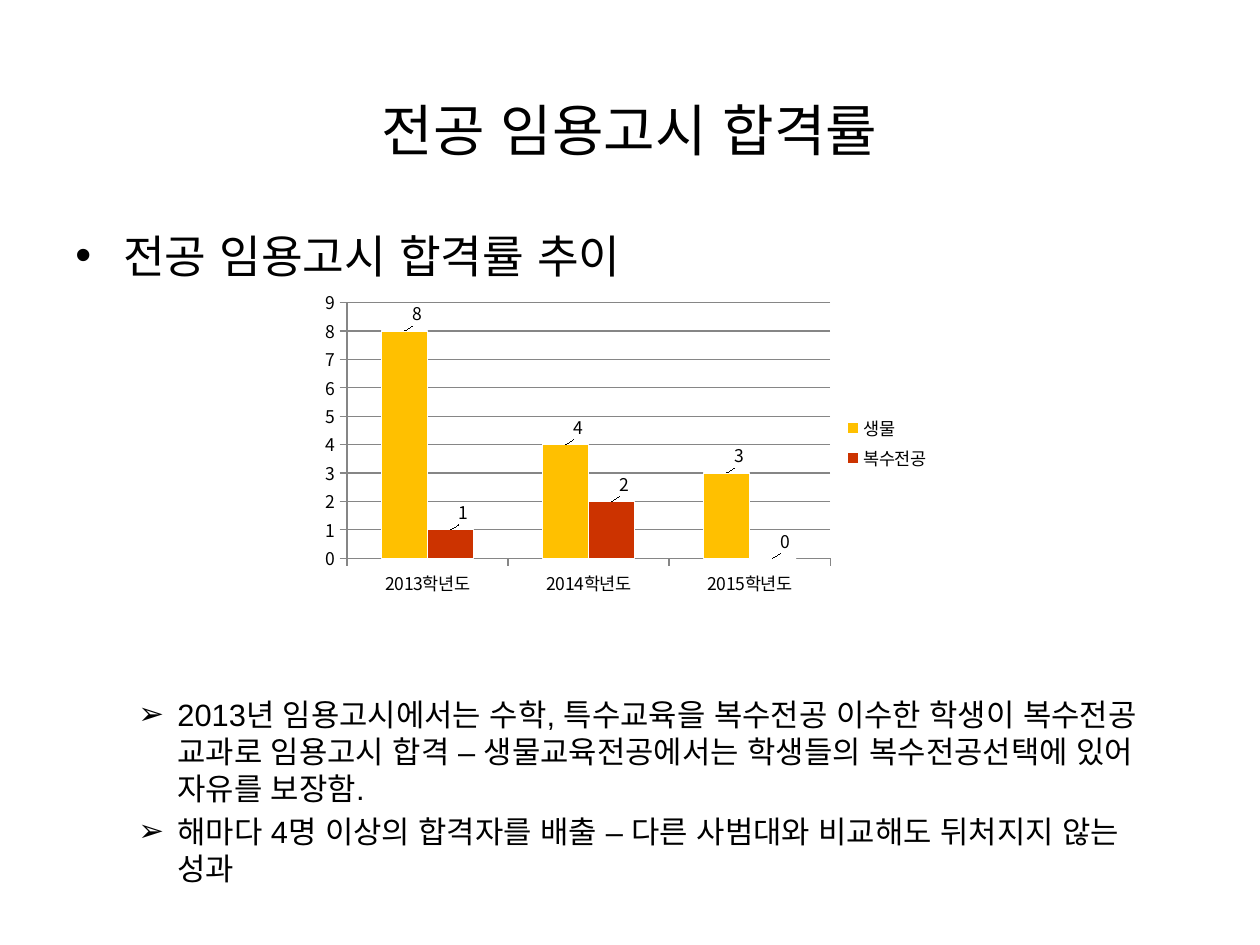
from lxml import etree
from pptx import Presentation
from pptx.chart import data
from pptx.dml.color import RGBColor
from pptx.enum import chart as ch, text
from pptx.oxml import ns, parse_xml
from pptx.util import Inches, Pt


def hue(code):
    return RGBColor.from_string(code)


def write(place, lines, face, size, bullet=None, left=0, hang=0):
    frame = slide.shapes.add_textbox(*map(Inches, place)).text_frame
    frame.word_wrap = True
    for i, line in enumerate(lines):
        para = frame.paragraphs[0] if i == 0 else frame.add_paragraph()
        para.text = line
        if i:
            para.space_before = Pt(3.5)
        if bullet:
            props = para._p.get_or_add_pPr()
            props.set("marL", str(Inches(left)))
            props.set("indent", str(-Inches(hang)))
            etree.SubElement(props, ns.qn("a:buFont"), typeface="Arial")
            etree.SubElement(props, ns.qn("a:buChar"), char=bullet)
        para.font.name = face
        para.font.size = Pt(size)
        para.font.color.rgb = hue("000000")
        run = para.runs[0]._r.get_or_add_rPr()
        run.set("lang", "ko-KR")
        etree.SubElement(run, ns.qn("a:ea"), typeface="Arial")
    return frame


deck = Presentation()
deck.slide_width, deck.slide_height = Inches(10), Inches(7.5)
slide = deck.slides.add_slide(deck.slide_layouts[6])

title = write((0.5, 0.6, 9, 0.85), ["전공 임용고시 합격률"], "Arial", 32)
title.vertical_anchor = text.MSO_ANCHOR.MIDDLE
title.paragraphs[0].alignment = text.PP_ALIGN.CENTER

write((0.5, 1.76, 9, 0.5), ["전공 임용고시 합격률 추이"],
      "Noto Sans CJK KR", 25.9, "•", 0.38, 0.38)

notes = [
    "2013년 임용고시에서는 수학, 특수교육을 복수전공 이수한 학생이 복수전공 "
    "교과로 임용고시 합격 – 생물교육전공에서는 학생들의 복수전공선택에 있어 자유를 보장함.",
    "해마다 4명 이상의 합격자를 배출 – 다른 사범대와 비교해도 뒤처지지 않는 성과",
]
write((0.5, 5.47, 9, 1.6), notes, "Arial", 17.6, "➢", 0.81, 0.31)

table = data.CategoryChartData()
table.categories = ["2013학년도", "2014학년도", "2015학년도"]
table.add_series("생물", [8, 4, 3])
table.add_series("복수전공", [1, 2, 0])
chart = slide.shapes.add_chart(
    ch.XL_CHART_TYPE.COLUMN_CLUSTERED, Inches(2.48), Inches(2.25),
    Inches(5), Inches(2.53), table).chart
chart.has_title = False
chart.font.name = "Noto Sans CJK KR"
chart.font.size = Pt(10)
chart.font.color.rgb = hue("000000")
chart.has_legend = True
chart.legend.position = ch.XL_LEGEND_POSITION.RIGHT
chart.legend.include_in_layout = False

scale = chart.value_axis
scale.minimum_scale, scale.maximum_scale, scale.major_unit = 0, 9, 1
scale.has_major_gridlines = True
for line in (scale.format.line, chart.category_axis.format.line,
             scale.major_gridlines.format.line):
    line.color.rgb = hue("868686")
    line.width = Pt(0.75)
for axis in (scale, chart.category_axis):
    axis.major_tick_mark = ch.XL_TICK_MARK.OUTSIDE
    axis.minor_tick_mark = ch.XL_TICK_MARK.NONE

plot = chart.plots[0]
plot.vary_by_categories = False
plot.gap_width, plot.overlap = 150, 0


def layout(node, **sizes):
    manual = etree.SubElement(node, ns.qn("c:manualLayout"))
    for key, value in sizes.items():
        etree.SubElement(manual, ns.qn("c:" + key), val=str(value))


area = chart._chartSpace.chart.plotArea
for old in area.findall(ns.qn("c:layout")):
    area.remove(old)
box = etree.Element(ns.qn("c:layout"))
area.insert(0, box)
layout(box, layoutTarget="inner", xMode="edge", yMode="edge",
       x=0.055, y=0.06, w=0.767, h=0.802)

plain = (
    '<c:extLst xmlns:c="http://schemas.openxmlformats.org/drawingml/2006/chart">'
    '<c:ext uri="{CE6537A1-D6FC-4f65-9D91-7224C49458BB}" '
    'xmlns:c15="http://schemas.microsoft.com/office/drawing/2012/chart">'
    '<c15:showLeaderLines val="0"/></c:ext></c:extLst>')

for row, color in zip(plot.series, ["FFC000", "CC3300"]):
    row.format.fill.solid()
    row.format.fill.fore_color.rgb = hue(color)
    row.format.line.color.rgb = hue("FFFFFF")
    row.format.line.width = Pt(0.75)
    row.invert_if_negative = False
    row.data_labels.show_value = True
    for i in range(3):
        row.points[i].data_label.position = ch.XL_LABEL_POSITION.OUTSIDE_END
    labels = row.data_labels._element
    for label in labels.findall(ns.qn("c:dLbl")):
        shift = etree.Element(ns.qn("c:layout"))
        label.insert(1, shift)
        layout(shift, x=0.02, y=0)
    labels.append(parse_xml(plain))

deck.save("out.pptx")
